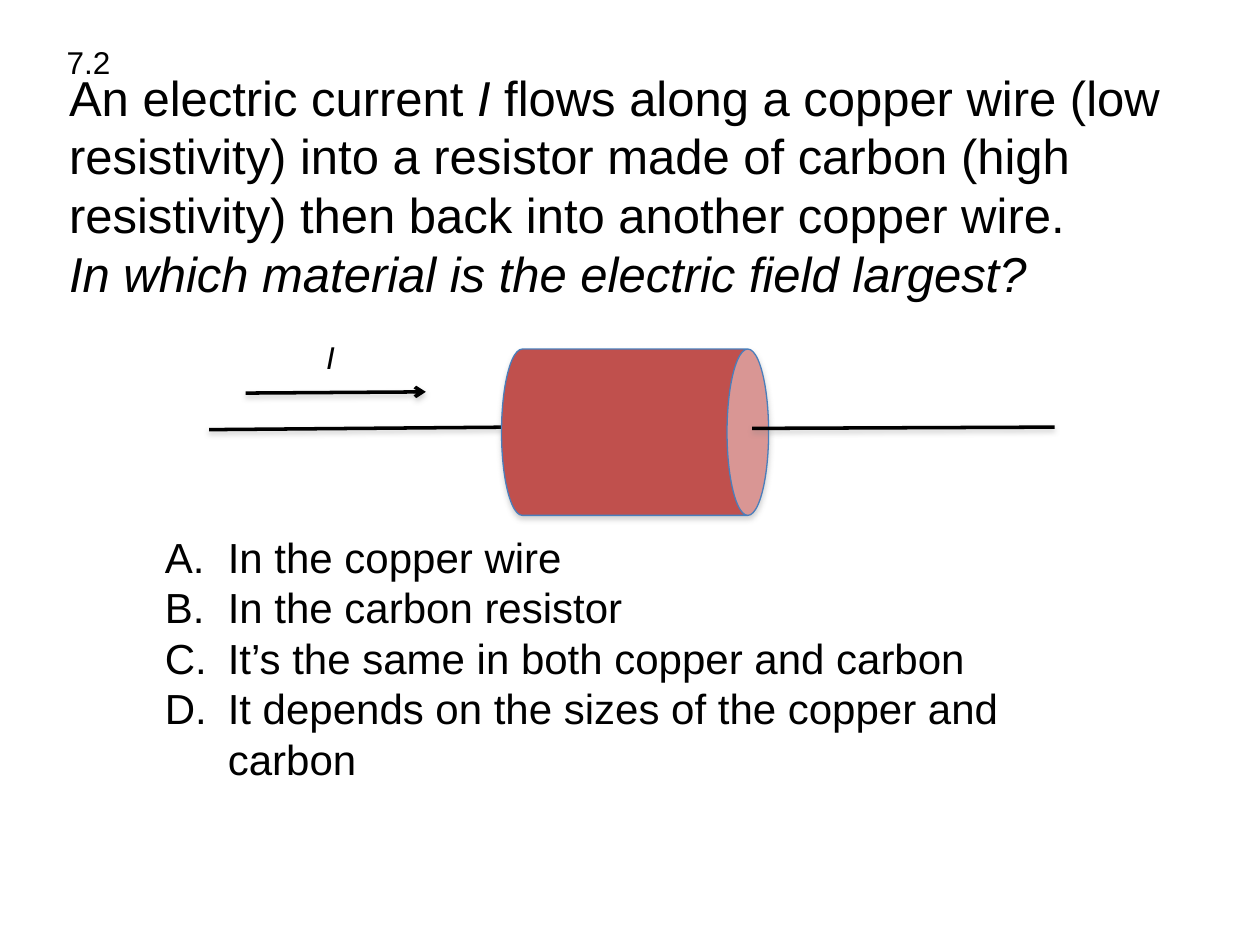
"""Build the slide of question 7.2 on the electric field in a resistor circuit."""
from lxml import etree
from pptx import Presentation
from pptx import util as u
from pptx.dml.color import RGBColor
from pptx.enum import shapes, text
from pptx.oxml.ns import qn


def color(value):
    return RGBColor.from_string(value)


def add_shadow(shape, opacity, distance):
    effects = etree.SubElement(shape._element.spPr, qn("a:effectLst"))
    shadow = etree.SubElement(effects, qn("a:outerShdw"), blurRad=str(u.Pt(3.1)),
                              dist=str(u.Pt(distance)), dir="5400000", rotWithShape="0")
    tint = etree.SubElement(shadow, qn("a:srgbClr"), val="808080")
    etree.SubElement(tint, qn("a:alpha"), val=str(opacity * 1000))


deck = Presentation()
deck.slide_width, deck.slide_height = u.Inches(10), u.Inches(7.5)
page = deck.slides.add_slide(deck.slide_layouts[6])

wires = [
    ("left wire", 1.66, 3.41, 4.06, 3.39),
    ("right wire", 5.97, 3.4, 8.37, 3.39),
    ("current arrow", 1.95, 3.12, 3.38, 3.11),
]
for kind, *ends in wires:
    if kind == "right wire":
        resistor = page.shapes.add_shape(
            shapes.MSO_SHAPE.CAN, u.Inches(4.38), u.Inches(2.37), u.Inches(1.32), u.Inches(2.12))
        resistor.rotation = 90
        resistor.adjustments[0] = 0.25
        resistor.fill.solid()
        resistor.fill.fore_color.rgb = color("C0504D")
        resistor.line.color.rgb = color("4A7EBB")
        resistor.line.width = u.Pt(0.75)
        add_shadow(resistor, 35, 1.8)
    wire = page.shapes.add_connector(
        shapes.MSO_CONNECTOR.STRAIGHT, *[u.Inches(end) for end in ends])
    wire.line.color.rgb = color("000000")
    wire.line.width = u.Pt(2)
    if kind == "current arrow":
        etree.SubElement(wire.line._get_or_add_ln(), qn("a:tailEnd"), type="arrow")
    add_shadow(wire, 38, 1.6)

question = [[
    ("An electric current ", False),
    ("I", True),
    (" flows along a copper wire (low resistivity) into a resistor made of carbon "
     "(high resistivity) then back into another copper wire.", False),
    ("\n", False),
    ("In which material is the electric field largest?", True),
]]
answers = [[(answer, False)] for answer in (
    "In the copper wire",
    "In the carbon resistor",
    "It’s the same in both copper and carbon",
    "It depends on the sizes of the copper and carbon",
)]
blocks = [
    ("question", (0.45, 0.44, 9.55, 2.05), 28, question),
    ("answers", (1.21, 4.17, 6.87, 2.1), 24, answers),
    ("current label", (2.49, 2.63, 0.27, 0.4), 18, [[("I", True)]]),
    ("number", (0.43, 0.29, 0.55, 0.4), 18, [[("7.2", False)]]),
]
for kind, place, size, paragraphs in blocks:
    box = page.shapes.add_textbox(*[u.Inches(length) for length in place])
    frame = box.text_frame
    frame.word_wrap = kind in ("question", "answers")
    if kind == "question":
        frame.vertical_anchor = text.MSO_ANCHOR.MIDDLE
    else:
        frame.auto_size = text.MSO_AUTO_SIZE.SHAPE_TO_FIT_TEXT
    for index, pieces in enumerate(paragraphs):
        para = frame.add_paragraph() if index else frame.paragraphs[0]
        para.line_spacing = u.Pt(size * 1.2)
        if kind == "answers":
            props = para._p.get_or_add_pPr()
            props.set("marL", str(u.Inches(0.5)))
            props.set("indent", str(u.Inches(-0.5)))
            etree.SubElement(props, qn("a:buFont"), typeface="+mj-lt")
            etree.SubElement(props, qn("a:buAutoNum"), type="alphaUcPeriod")
        for words, italic in pieces:
            if words == "\n":
                para.add_line_break()
                continue
            span = para.add_run()
            span.text = words
            span.font.name = "Arial"
            span.font.size = u.Pt(size)
            span.font.italic = italic
            span.font.color.rgb = color("000000")

deck.save("out.pptx")
